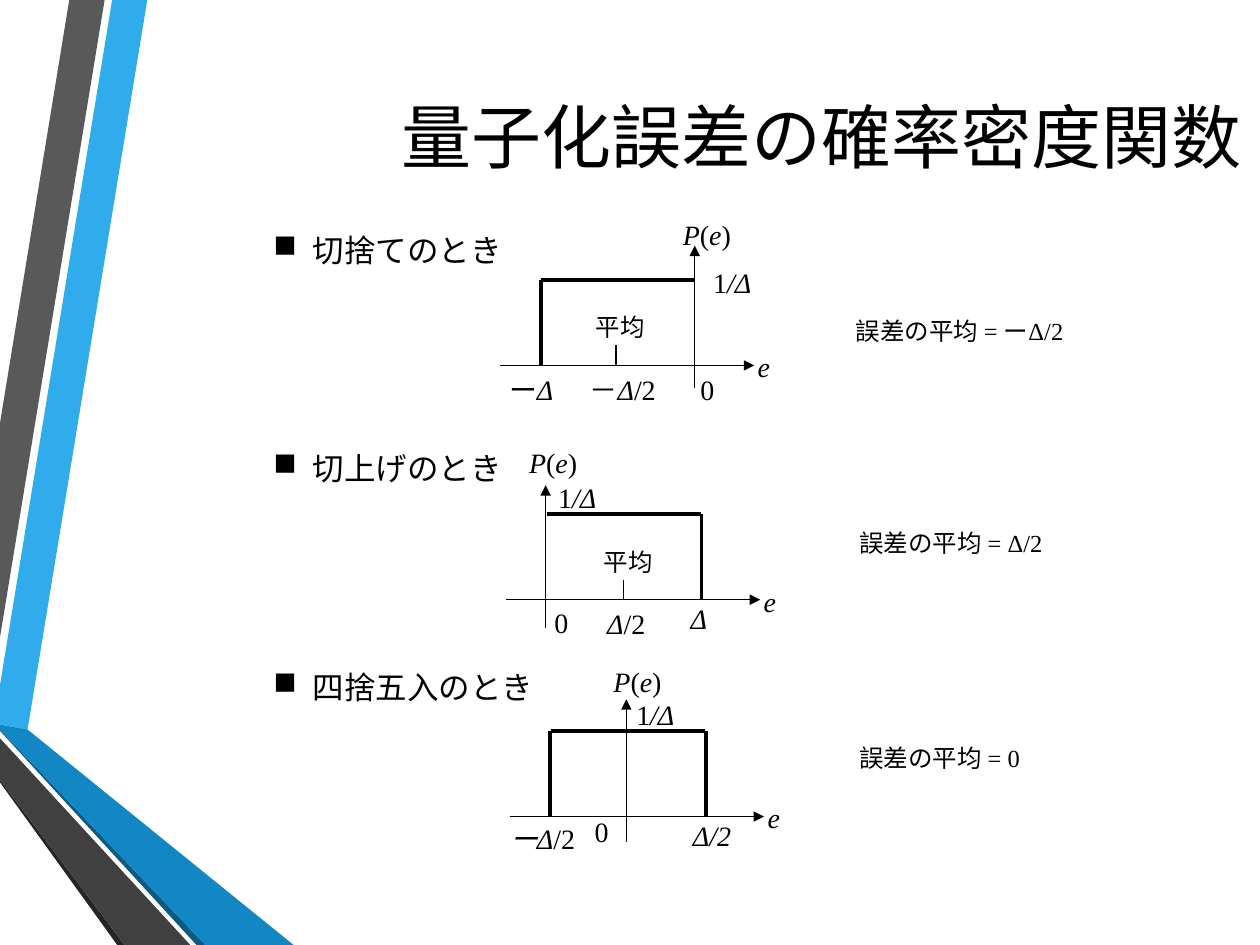
import pptx
import pptx.dml.color
import pptx.enum.shapes
import pptx.enum.text
import pptx.oxml.ns
import pptx.util
from lxml import etree

Pt = pptx.util.Pt
ANCHOR = pptx.enum.text.MSO_ANCHOR
ALIGN = pptx.enum.text.PP_ALIGN
BLACK = "000000"
LABEL_HEIGHT = 27.4

RIBBONS = [
    ("30ACEC", [(0, 391.7), (0, 414), (15.8, 416.9), (84.2, 0), (64.1, 0)]),
    ("595959", [(59.8, 0), (39.6, 0), (0, 241.9), (0, 364.3)]),
    ("262626", [(0, 445.7), (0, 447.1), (67, 540), (71.3, 540)]),
    ("0C5A82", [(0, 416.9), (0, 417.6), (112.3, 540), (117.4, 540)]),
    ("1287C3", [(0, 416.9), (117.4, 540), (167.8, 540), (15.8, 416.9), (0, 414)]),
    ("404040", [(0, 445.7), (71.3, 540), (108.7, 540), (0, 421.9)]),
]

CASES = [
    dict(heading="切捨てのとき", heading_y=143, mean="誤差の平均 = ーΔ/2",
         mean_at=(488.9, 175), origin=(286, 208.8), p_axis=111, p_top=-68.4,
         edges=[23], tick=66,
         labels=[("*P*(*e*)", 104.2, -88.6), ("1*/Δ*", 121.5, -61.2),
                 ("0", 114.3, 0), ("ー*Δ*", 4.9, 0), ("－*Δ*/2", 51, 0)]),
    dict(heading="切上げのとき", heading_y=267.5, mean="誤差の平均 = Δ/2",
         mean_at=(491, 296.6), origin=(289.4, 342.7), p_axis=22.4, p_top=-65.5,
         edges=[111.5], tick=67,
         labels=[("*P*(*e*)", 13, -92.1), ("1*/Δ*", 29.6, -72),
                 ("0", 27.4, -0.7), ("*Δ*", 105.2, -2.9), ("*Δ*/2", 57.6, 0)]),
    dict(heading="四捨五入のとき", heading_y=392.5, mean="誤差の平均 = 0",
         mean_at=(491, 419), origin=(291.6, 466.6), p_axis=66.3, p_top=-67,
         edges=[22.5, 111.6], tick=None,
         labels=[("*P*(*e*)", 59, -90.8), ("1*/Δ*", 72, -72),
                 ("0", 48.2, -5.1), ("*Δ/2*", 104.4, -2.9), ("*ーΔ*/2", -0.7, -1.5)]),
]


def color(value):
    return pptx.dml.color.RGBColor.from_string(value)


def add_text(slide, text, left, top, width=45, height=LABEL_HEIGHT, size=16,
             font="Times New Roman", align=ALIGN.LEFT, wrap=False, bullet=None):
    box = slide.shapes.add_textbox(Pt(left), Pt(top), Pt(width), Pt(height))
    frame = box.text_frame
    frame.word_wrap = wrap
    frame.vertical_anchor = ANCHOR.MIDDLE
    frame.margin_left = frame.margin_right = 0
    frame.margin_top = frame.margin_bottom = 0
    paragraph = frame.paragraphs[0]
    paragraph.alignment = align
    for index, piece in enumerate(text.split("*")):
        if piece:
            run = paragraph.add_run()
            run.text = piece
            run.font.name = font
            run.font.size = Pt(size)
            run.font.italic = index % 2 == 1
            run.font.color.rgb = color(BLACK)
    if bullet:
        properties = paragraph._p.get_or_add_pPr()
        properties.set("marL", str(Pt(22.5)))
        properties.set("indent", str(-Pt(22.5)))
        mark = etree.SubElement(properties, pptx.oxml.ns.qn("a:buChar"))
        mark.set("char", bullet)


def add_line(slide, start, end, weight=0.75, arrow=False):
    line = slide.shapes.add_connector(
        pptx.enum.shapes.MSO_CONNECTOR.STRAIGHT,
        Pt(start[0]), Pt(start[1]), Pt(end[0]), Pt(end[1]))
    line.line.color.rgb = color(BLACK)
    line.line.width = Pt(weight)
    if arrow:
        head = etree.SubElement(line.line._get_or_add_ln(), pptx.oxml.ns.qn("a:tailEnd"))
        head.set("type", "triangle")
    etree.SubElement(line._element.spPr, pptx.oxml.ns.qn("a:effectLst"))


def add_ribbons(slide, left, top):
    for fill, corners in RIBBONS:
        points = [(Pt(left + x), Pt(top + y)) for x, y in corners]
        builder = slide.shapes.build_freeform(*points[0])
        builder.add_line_segments(points[1:], close=True)
        ribbon = builder.convert_to_shape()
        ribbon.shadow.inherit = False
        ribbon.fill.solid()
        ribbon.fill.fore_color.rgb = color(fill)
        ribbon.line.fill.background()


def add_density_plot(slide, left, baseline, p_axis, p_top, edges, tick, labels):
    def at(x, y):
        return left + x, baseline + y

    plateau = -49
    add_line(slide, at(0, 0), at(145, 0), arrow=True)
    add_line(slide, at(p_axis, p_top + 81.4), at(p_axis, p_top), arrow=True)
    add_line(slide, at(23, plateau), at(111, plateau), weight=2.25)
    for edge in edges:
        add_line(slide, at(edge, plateau), at(edge, 0), weight=2.25)
    if tick:
        add_line(slide, at(tick, 0), at(tick, -11.5))
        add_text(slide, "平均", *at(tick - 11.5, -35.6), size=14)
    for text, x, y in labels + [("*e*", 147, -13)]:
        add_text(slide, text, *at(x, y))


def add_case(slide, heading, heading_y, mean, mean_at, origin, **plot):
    add_text(slide, heading, 156.2, heading_y - 15, width=180, height=30,
             size=18, bullet="■")
    add_density_plot(slide, *origin, **plot)
    add_text(slide, mean, *mean_at, width=157, size=14)


def main():
    deck = pptx.Presentation()
    deck.slide_width, deck.slide_height = Pt(720), Pt(540)
    slide = deck.slides.add_slide(deck.slide_layouts[6])
    add_ribbons(slide, 0, 0)
    add_text(slide, "量子化誤差の確率密度関数", 109.4, 33.1, width=599.8, height=88.6,
             size=40, font="Calibri", align=ALIGN.RIGHT, wrap=True)
    for case in CASES:
        add_case(slide, **case)
    deck.save("out.pptx")


if __name__ == "__main__":
    main()
